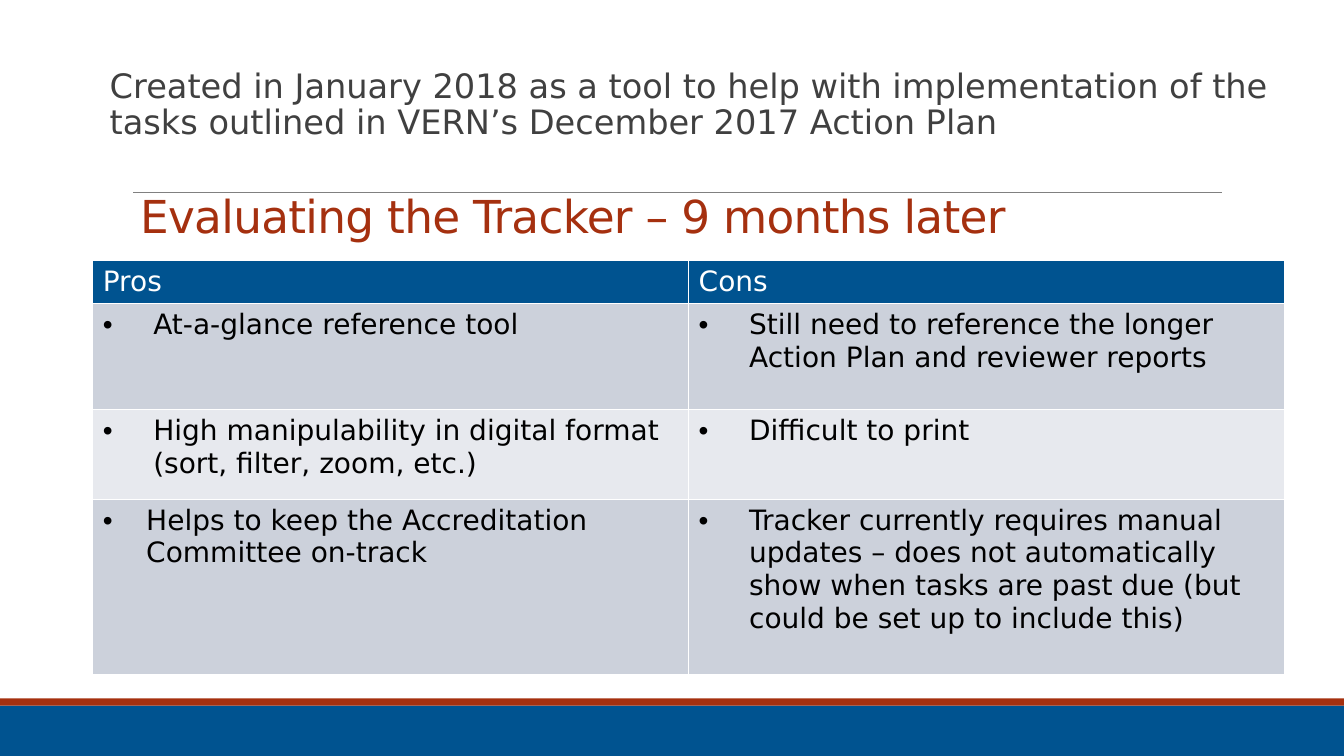
"""Build the slide that weighs the pros and cons of the tracker."""
import pptx
import pptx.dml.color
import pptx.enum.shapes
import pptx.enum.text
import pptx.oxml
import pptx.oxml.ns
import pptx.util
from dataclasses import dataclass

Inches = pptx.util.Inches
Pt = pptx.util.Pt

TITLE = "Evaluating the Tracker – 9 months later"
INTRO = ("Created in January 2018 as a tool to help with implementation of the "
         "tasks outlined in VERN’s December 2017 Action Plan")
HEADINGS = ("Pros", "Cons")
POINTS = [
    ("At-a-glance reference tool",
     "Still need to reference the longer Action Plan and reviewer reports"),
    ("High manipulability in digital format (sort, filter, zoom, etc.)",
     "Difficult to print"),
    ("Helps to keep the Accreditation Committee on-track",
     "Tracker currently requires manual updates – does not automatically show "
     "when tasks are past due (but could be set up to include this)"),
]
ROW_HEIGHTS = (0.42, 1.05, 0.89, 1.74)
COLUMN_WIDTH = 5.91
INDENT = 0.5
NARROW_INDENTS = {(3, 0): 0.43}


@dataclass(frozen=True)
class Theme:
    font: str = "DejaVu Sans"
    blue: str = "005390"
    red: str = "A5300F"
    rule: str = "808080"
    gray: str = "404040"
    black: str = "000000"
    white: str = "FFFFFF"
    bands: tuple = ("E7E9EE", "CCD1DB")
    title_size: float = 32.4
    intro_size: float = 24
    table_size: float = 20


THEME = Theme()


def rgb(value):
    return pptx.dml.color.RGBColor.from_string(value)


def write(frame, text, size, color, spacing=1.0, tracking=None, indent=None):
    frame.word_wrap = True
    paragraph = frame.paragraphs[0]
    paragraph.alignment = pptx.enum.text.PP_ALIGN.LEFT
    paragraph.line_spacing = spacing
    run = paragraph.add_run()
    run.text = text
    run.font.name = THEME.font
    run.font.size = Pt(size)
    run.font.bold = False
    run.font.color.rgb = rgb(color)
    if tracking is not None:
        run.font._element.set("spc", str(round(tracking * 100)))
    if indent is not None:
        properties = paragraph._p.get_or_add_pPr()
        properties.set("marL", str(Inches(indent)))
        properties.set("indent", str(-Inches(indent)))
        namespace = pptx.oxml.ns.nsdecls("a")
        for bullet in (f'<a:buFont {namespace} typeface="Arial"/>',
                       f'<a:buChar {namespace} char="•"/>'):
            properties.append(pptx.oxml.parse_xml(bullet))


def add_band(slide, top, height, color):
    band = slide.shapes.add_shape(pptx.enum.shapes.MSO_SHAPE.RECTANGLE, 0, Inches(top),
                                  Inches(13.33), Inches(height))
    band.shadow.inherit = False
    band.fill.solid()
    band.fill.fore_color.rgb = rgb(color)
    band.line.fill.background()


def add_rule(slide):
    rule = slide.shapes.add_connector(pptx.enum.shapes.MSO_CONNECTOR.STRAIGHT, Inches(1.32),
                                      Inches(1.91), Inches(12.12), Inches(1.91))
    rule.line.color.rgb = rgb(THEME.rule)
    rule.line.width = Pt(0.5)
    rule._element.spPr.append(
        pptx.oxml.parse_xml(f'<a:effectLst {pptx.oxml.ns.nsdecls("a")}/>'))


def set_borders(cell):
    properties = cell._tc.get_or_add_tcPr()
    for position, side in enumerate("LRTB"):
        properties.insert(position, pptx.oxml.parse_xml(
            f'<a:ln{side} {pptx.oxml.ns.nsdecls("a")} w="{Pt(1)}"><a:solidFill>'
            f'<a:srgbClr val="{THEME.white}"/></a:solidFill></a:ln{side}>'))


def add_comparison(slide):
    rows = [HEADINGS, *POINTS]
    table = slide.shapes.add_table(
        len(rows), len(HEADINGS), Inches(0.92), Inches(2.58),
        Inches(COLUMN_WIDTH * len(HEADINGS)), Inches(sum(ROW_HEIGHTS))).table
    for column in table.columns:
        column.width = Inches(COLUMN_WIDTH)
    for r, (row, height) in enumerate(zip(rows, ROW_HEIGHTS)):
        table.rows[r].height = Inches(height)
        for c, text in enumerate(row):
            cell = table.cell(r, c)
            cell.fill.solid()
            cell.fill.fore_color.rgb = rgb(THEME.bands[r % 2] if r else THEME.blue)
            set_borders(cell)
            write(cell.text_frame, text, THEME.table_size,
                  THEME.black if r else THEME.white,
                  indent=NARROW_INDENTS.get((r, c), INDENT) if r else None)


def main():
    deck = pptx.Presentation()
    deck.slide_width, deck.slide_height = Inches(13.33), Inches(7.5)
    slide = deck.slides.add_slide(deck.slide_layouts[5])

    add_band(slide, 7, 0.5, THEME.blue)
    add_band(slide, 6.93, 0.07, THEME.red)
    add_rule(slide)

    title = slide.shapes.title
    title.left, title.top, title.width, title.height = map(Inches, (1.29, 1.86, 11, 0.6))
    title.text_frame.auto_size = pptx.enum.text.MSO_AUTO_SIZE.NONE
    title.text_frame.vertical_anchor = pptx.enum.text.MSO_ANCHOR.BOTTOM
    write(title.text_frame, TITLE, THEME.title_size, THEME.red, spacing=0.85, tracking=-0.5)

    intro = slide.shapes.add_textbox(*map(Inches, (0.99, 0.64, 12, 1.04))).text_frame
    intro.margin_right = 0
    write(intro, INTRO, THEME.intro_size, THEME.gray, spacing=0.9)

    add_comparison(slide)
    deck.save("out.pptx")


if __name__ == "__main__":
    main()
